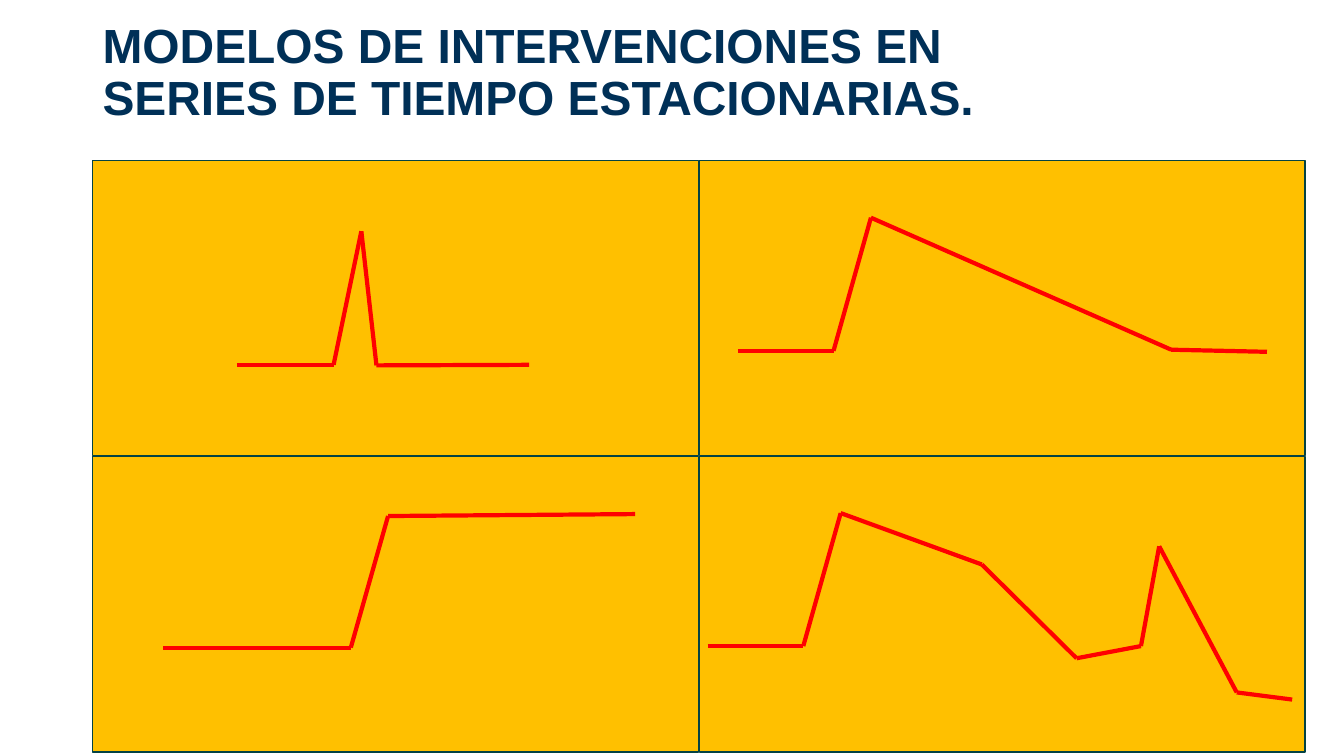
import pptx
import pptx.util
import pptx.dml.color
import pptx.enum.shapes
import pptx.enum.text
import pptx.oxml.ns
from itertools import pairwise
from lxml import etree

Pt = pptx.util.Pt
RGBColor = pptx.dml.color.RGBColor

TITLE = "MODELOS DE INTERVENCIONES EN SERIES DE TIEMPO ESTACIONARIAS."
PULSE = [(169.2, 260.6), (238.3, 260.6), (258.1, 165.2), (268.9, 261), (378, 260.6)]
DECAY = [(527, 250.6), (595.4, 250.6), (622.1, 155.5), (836.6, 249.8), (905, 251.3)]
STEP = [(116.6, 462.6), (250.6, 462.6), (277.2, 368.6), (453.6, 367.2)]
MIXED = [(505.4, 461.5), (573.8, 461.5), (600.5, 366.5), (701.3, 403.2), (769, 470.2),
         (815, 461.5), (828, 390.2), (883.4, 494.6), (923, 499.7)]
PANELS = [[PULSE, DECAY], [STEP, MIXED]]

NAVY = RGBColor(0x00, 0x30, 0x57)
AMBER = RGBColor(0xFF, 0xC0, 0x00)
TEAL = RGBColor(0x04, 0x43, 0x44)
RED = RGBColor(0xFF, 0x00, 0x00)

LEFT, TOP = 66.2, 114.5
PANEL_W, PANEL_H = 432.7, 211
GAP = 0.7


def add_title(s):
    sp = s.shapes.add_textbox(Pt(LEFT), Pt(9.4), Pt(714.2), Pt(86.4))
    tf = sp.text_frame
    tf.word_wrap = True
    tf.vertical_anchor = pptx.enum.text.MSO_ANCHOR.MIDDLE
    p = tf.paragraphs[0]
    p.text = TITLE
    p.line_spacing = 0.9
    p.font.name = "Arial"
    p.font.size = Pt(34.2)
    p.font.bold = True
    p.font.color.rgb = NAVY


def add_panel(s, row, col):
    x = LEFT + col * (PANEL_W + GAP)
    y = TOP + row * (PANEL_H + GAP)
    sp = s.shapes.add_shape(pptx.enum.shapes.MSO_SHAPE.RECTANGLE,
                            Pt(x), Pt(y), Pt(PANEL_W), Pt(PANEL_H))
    sp.shadow.inherit = False
    sp.fill.solid()
    sp.fill.fore_color.rgb = AMBER
    sp.line.color.rgb = TEAL
    sp.line.width = Pt(1)


def add_series(s, points):
    for (x1, y1), (x2, y2) in pairwise(points):
        line = s.shapes.add_connector(pptx.enum.shapes.MSO_CONNECTOR.STRAIGHT,
                                      Pt(x1), Pt(y1), Pt(x2), Pt(y2))
        line.line.color.rgb = RED
        line.line.width = Pt(3)
        etree.SubElement(line._element.spPr, pptx.oxml.ns.qn("a:effectLst"))


def main():
    prs = pptx.Presentation()
    prs.slide_width, prs.slide_height = Pt(960), Pt(540)
    s = prs.slides.add_slide(prs.slide_layouts[6])
    add_title(s)
    for row, panels in enumerate(PANELS):
        for col, points in enumerate(panels):
            add_panel(s, row, col)
            add_series(s, points)
    prs.save("out.pptx")


if __name__ == "__main__":
    main()
